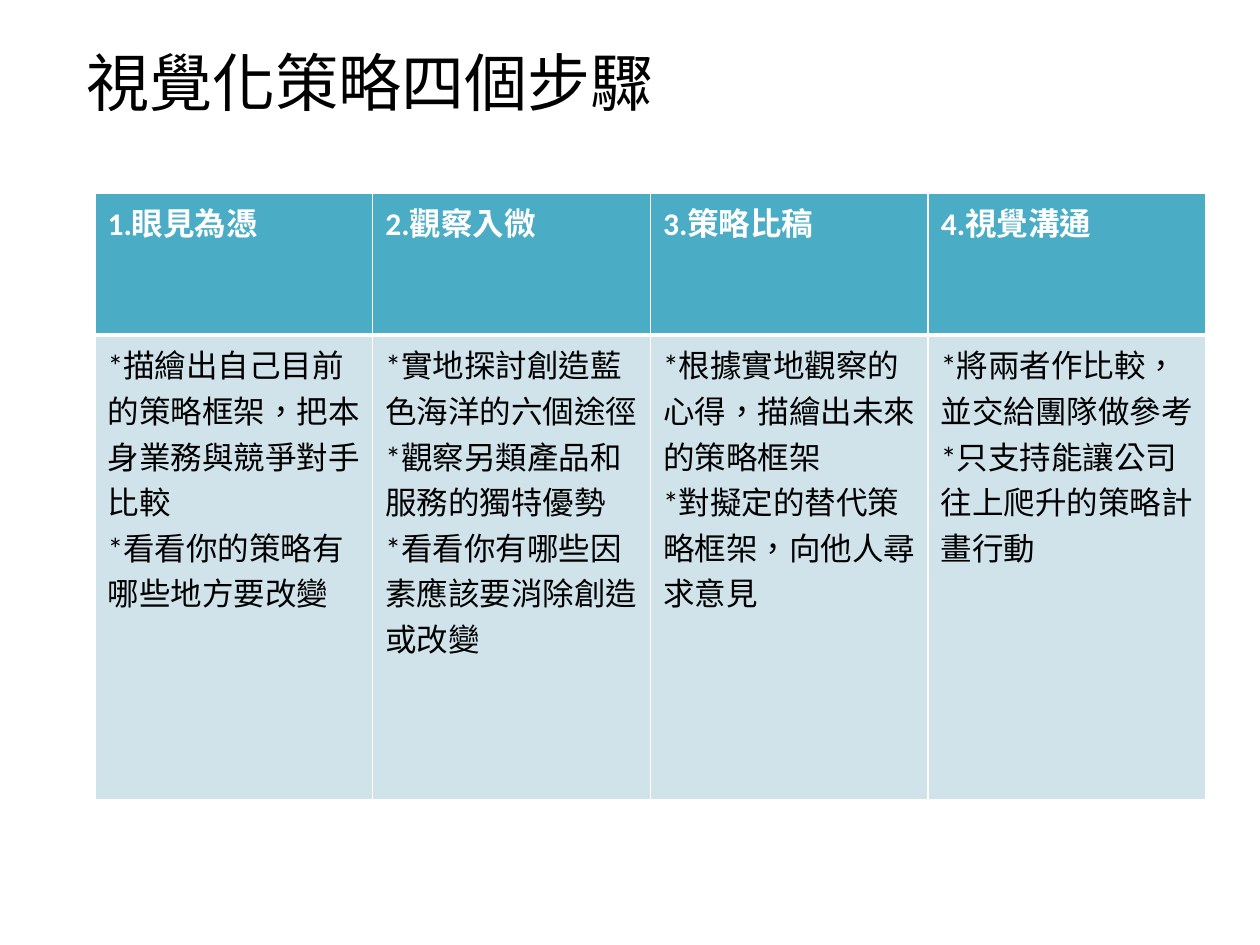
from lxml.etree import SubElement
from pptx import Presentation
from pptx.dml.color import RGBColor
from pptx.enum.lang import MSO_LANGUAGE_ID as LANG
from pptx.enum.text import MSO_ANCHOR as ANCHOR
from pptx.oxml.ns import qn
from pptx.util import Pt

PX = 914400 / 126
COLORS = {"header": "4BACC6", "body": "D0E3EA", "white": "FFFFFF", "black": "000000"}
TITLE = "視覺化策略四個步驟"
STEPS = [
    ("1.眼見為憑", ["*描繪出自己目前的策略框架，把本身業務與競爭對手比較",
                "*看看你的策略有哪些地方要改變"]),
    ("2.觀察入微", ["*實地探討創造藍色海洋的六個途徑",
                "*觀察另類產品和服務的獨特優勢",
                "*看看你有哪些因素應該要消除創造或改變"]),
    ("3.策略比稿", ["*根據實地觀察的心得，描繪出未來的策略框架",
                "*對擬定的替代策略框架，向他人尋求意見"]),
    ("4.視覺溝通", ["*將兩者作比較，並交給團隊做參考",
                "*只支持能讓公司往上爬升的策略計畫行動"]),
]
TITLE_FONT = {"name": "Noto Sans CJK JP", "size": Pt(36)}
HEADER_FONT = {"name": "Calibri", "size": Pt(18), "bold": True}
BODY_FONT = {**HEADER_FONT, "bold": False}


def px(n):
    return round(n * PX)


def rgb(name):
    return RGBColor.from_string(COLORS[name])


def write(tf, lines, font, color):
    for i, line in enumerate(lines):
        p = tf.paragraphs[0] if i == 0 else tf.add_paragraph()
        r = p.add_run()
        r.text = line
        for key, value in font.items():
            setattr(r.font, key, value)
        r.font.language_id = LANG.TRADITIONAL_CHINESE
        r.font.color.rgb = rgb(color)


def set_borders(cell, **widths):
    """Draw white cell borders; widths are points by side (L, R, T, B)."""
    tcPr = cell._tc.get_or_add_tcPr()
    for side, width in widths.items():
        ln = SubElement(tcPr, qn(f"a:ln{side}"), w=str(Pt(width)))
        fill = SubElement(ln, qn("a:solidFill"))
        SubElement(fill, qn("a:srgbClr"), val=COLORS["white"])


def add_title(s, x, y, w, h):
    tf = s.shapes.add_textbox(px(x), px(y), px(w), px(h)).text_frame
    tf.word_wrap = True
    tf.vertical_anchor = ANCHOR.MIDDLE
    write(tf, [TITLE], TITLE_FONT, "black")


def add_steps_table(s, x, y, w, h, header_h):
    table = s.shapes.add_table(2, len(STEPS), px(x), px(y), px(w), px(h)).table
    for row, height in zip(table.rows, (header_h, h - header_h)):
        row.height = px(height)
    for col, (heading, points) in enumerate(STEPS):
        table.columns[col].width = px(w / len(STEPS))
        rows = [([heading], HEADER_FONT, "white", "header", {"T": 1, "B": 3}),
                (points, BODY_FONT, "black", "body", {"T": 3, "B": 1})]
        for row, (lines, font, color, fill, edges) in enumerate(rows):
            cell = table.cell(row, col)
            write(cell.text_frame, lines, font, color)
            set_borders(cell, L=1, R=1, **edges)
            cell.fill.solid()
            cell.fill.fore_color.rgb = rgb(fill)


def main():
    prs = Presentation()
    prs.slide_width, prs.slide_height = px(1260), px(945)
    s = prs.slides.add_slide(prs.slide_layouts[6])
    add_steps_table(s, 95, 193, 1111, 607, header_h=142)
    add_title(s, 74, 37, 1121, 89)
    prs.save("out.pptx")


if __name__ == "__main__":
    main()
